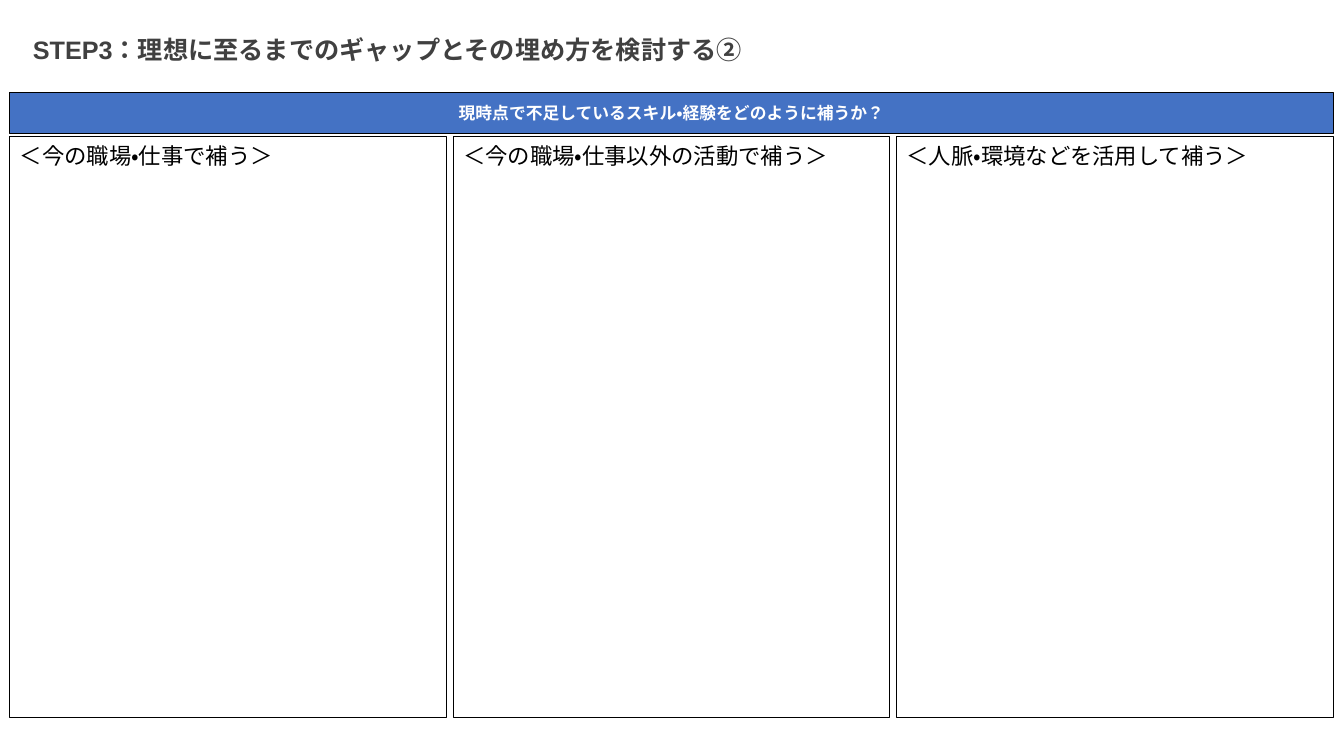
from dataclasses import dataclass

from pptx import Presentation
from pptx import util as u
from pptx.dml.color import RGBColor
from pptx.enum import lang, shapes, text
from pptx.shapes.autoshape import Shape
from pptx.slide import Slide

BLUE = RGBColor(0x44, 0x72, 0xC4)
WHITE = RGBColor(0xFF, 0xFF, 0xFF)
BLACK = RGBColor(0x00, 0x00, 0x00)
GREY = RGBColor(0x40, 0x40, 0x40)

MARGIN = 0.25
BAND_WIDTH = 33.35
COLUMN_GAP = 0.17

HEADINGS = (
    "＜今の職場・仕事で補う＞",
    "＜今の職場・仕事以外の活動で補う＞",
    "＜人脈・環境などを活用して補う＞",
)


@dataclass(frozen=True)
class Area:
    left: float
    top: float
    width: float
    height: float

    def lengths(self) -> tuple[u.Cm, u.Cm, u.Cm, u.Cm]:
        return u.Cm(self.left), u.Cm(self.top), u.Cm(self.width), u.Cm(self.height)


def write_text(
    box: Shape,
    wording: str,
    *,
    size: int,
    color: RGBColor,
    bold: bool = False,
    align: text.PP_ALIGN = text.PP_ALIGN.LEFT,
    anchor: text.MSO_ANCHOR = text.MSO_ANCHOR.TOP,
    wrap: bool = True,
) -> None:
    frame = box.text_frame
    frame.word_wrap = wrap
    frame.vertical_anchor = anchor
    para = frame.paragraphs[0]
    para.alignment = align
    span = para.add_run()
    span.text = wording
    span.font.name = "Arial"
    span.font.size = u.Pt(size)
    span.font.bold = bold
    span.font.color.rgb = color
    span.font.language_id = lang.MSO_LANGUAGE_ID.JAPANESE


def add_panel(page: Slide, area: Area, fill: RGBColor) -> Shape:
    panel = page.shapes.add_shape(shapes.MSO_SHAPE.RECTANGLE, *area.lengths())
    panel.shadow.inherit = False
    panel.fill.solid()
    panel.fill.fore_color.rgb = fill
    panel.line.color.rgb = BLACK
    panel.line.width = u.Pt(0.75)
    return panel


def main() -> None:
    deck = Presentation()
    deck.slide_width = u.Cm(33.87)
    deck.slide_height = u.Cm(19.05)
    page = deck.slides.add_slide(deck.slide_layouts[6])

    question = add_panel(page, Area(MARGIN, 2.34, BAND_WIDTH, 1.02), BLUE)
    write_text(
        question,
        "現時点で不足しているスキル・経験をどのように補うか？",
        size=12,
        color=WHITE,
        bold=True,
        align=text.PP_ALIGN.CENTER,
        anchor=text.MSO_ANCHOR.MIDDLE,
        wrap=False,
    )

    count = len(HEADINGS)
    width = (BAND_WIDTH - COLUMN_GAP * (count - 1)) / count
    for index, heading in enumerate(HEADINGS):
        left = MARGIN + index * (width + COLUMN_GAP)
        column = add_panel(page, Area(left, 3.45, width, 14.63), WHITE)
        write_text(column, heading, size=16, color=BLACK)

    title = page.shapes.add_textbox(*Area(0.58, 0.74, 22.5, 1.02).lengths())
    write_text(
        title,
        "STEP3：理想に至るまでのギャップとその埋め方を検討する②",
        size=18,
        color=GREY,
        bold=True,
    )
    title.text_frame.auto_size = text.MSO_AUTO_SIZE.SHAPE_TO_FIT_TEXT

    deck.save("out.pptx")


if __name__ == "__main__":
    main()
